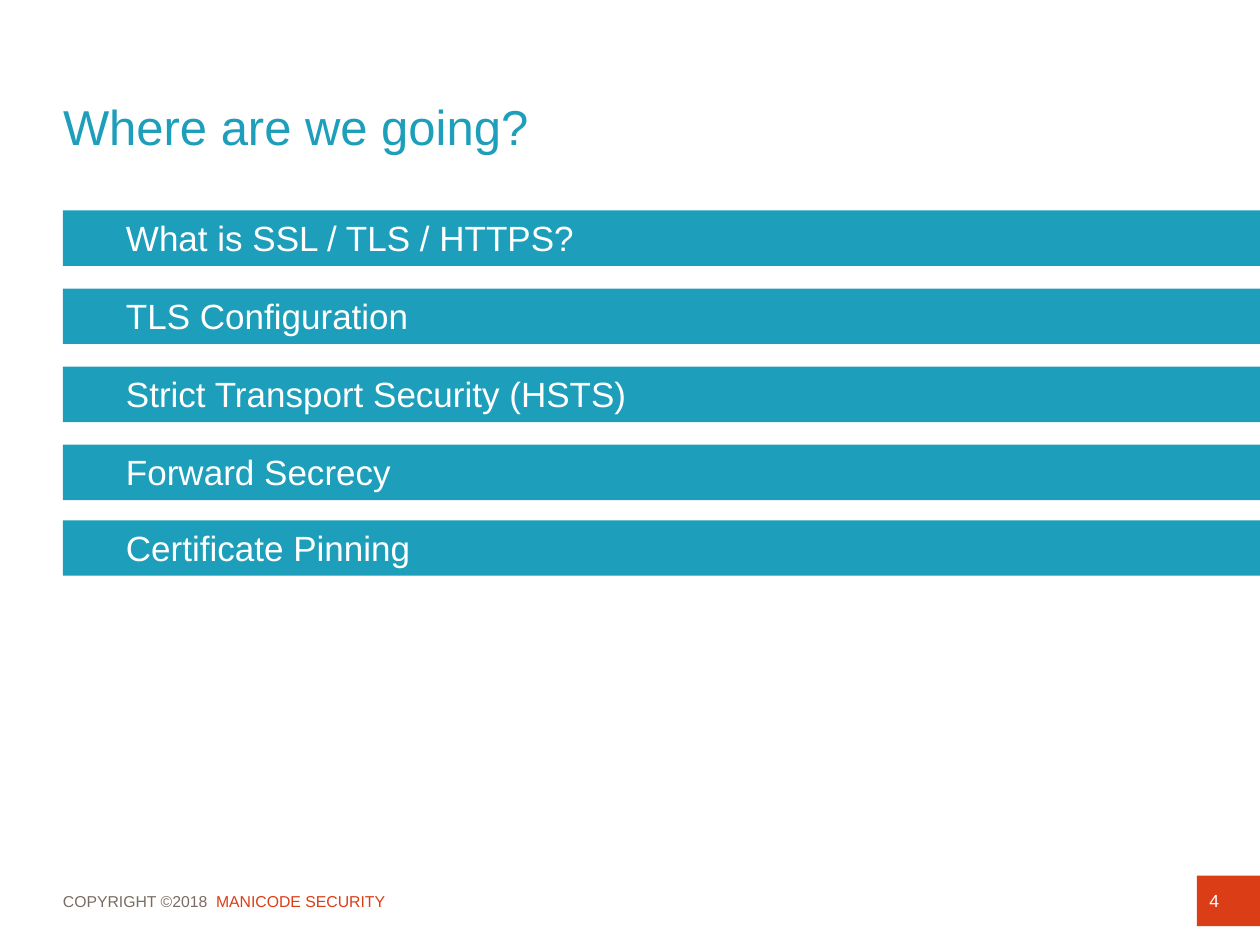
from typing import NamedTuple

from pptx import Presentation
from pptx.dml.color import RGBColor
from pptx.enum.shapes import MSO_SHAPE
from pptx.enum.text import MSO_ANCHOR, MSO_AUTO_SIZE, PP_ALIGN
from pptx.util import Emu, Pt

EMU_PER_PX = 9144  # 100 px to the inch
COLORS = {"teal": "1D9EBA", "red": "DB3D16", "taupe": "7A6C62", "white": "FFFFFF"}
FONT = "Arial"


class Box(NamedTuple):
    left: int
    top: int
    width: int
    height: int


class Topic(NamedTuple):
    label: str
    top: int


TOPICS = [
    Topic("What is SSL / TLS / HTTPS?", 167),
    Topic("TLS Configuration", 229),
    Topic("Strict Transport Security (HSTS)", 291),
    Topic("Forward Secrecy", 353),
    Topic("Certificate Pinning", 413),
]


def px(length: int) -> Emu:
    return Emu(length * EMU_PER_PX)


def rgb(color: str) -> RGBColor:
    return RGBColor.from_string(COLORS[color])


def write(frame, *runs: tuple[str, str], size: int, insets=(0, 0, 0, 0),
          anchor=MSO_ANCHOR.MIDDLE, space_after: int = 0) -> None:
    """Fill a text frame with one left-aligned paragraph of (text, color) runs."""
    frame.word_wrap = True
    frame.auto_size = MSO_AUTO_SIZE.NONE
    frame.vertical_anchor = anchor
    (frame.margin_left, frame.margin_top,
     frame.margin_right, frame.margin_bottom) = map(px, insets)
    paragraph = frame.paragraphs[0]
    paragraph.alignment = PP_ALIGN.LEFT
    paragraph.space_before = Pt(0)
    paragraph.space_after = Pt(space_after)
    for text, color in runs:
        run = paragraph.add_run()
        run.text = text
        run.font.name = FONT
        run.font.size = Pt(size)
        run.font.color.rgb = rgb(color)


def add_block(slide, box: Box, color: str):
    block = slide.shapes.add_shape(MSO_SHAPE.RECTANGLE, *map(px, box))
    block.shadow.inherit = False
    block.fill.solid()
    block.fill.fore_color.rgb = rgb(color)
    block.line.fill.background()
    return block


def add_topic_bar(slide, topic: Topic) -> None:
    bar = add_block(slide, Box(50, topic.top, 950, 44), "teal")
    write(bar.text_frame, (topic.label, "white"), size=20,
          insets=(50, 5, 10, 5), anchor=MSO_ANCHOR.TOP, space_after=3)
    bar.text_frame.auto_size = MSO_AUTO_SIZE.SHAPE_TO_FIT_TEXT


def main() -> None:
    deck = Presentation()
    deck.slide_width, deck.slide_height = px(1000), px(750)
    slide = deck.slides.add_slide(deck.slide_layouts[5])

    copyright_line = slide.shapes.add_textbox(*map(px, Box(50, 695, 900, 40)))
    write(copyright_line.text_frame, ("COPYRIGHT ©2018  ", "taupe"),
          ("MANICODE SECURITY", "red"), size=9)

    title = slide.shapes.title
    title.left, title.top, title.width, title.height = map(px, Box(50, 50, 900, 100))
    write(title.text_frame, ("Where are we going?", "teal"), size=28)

    page_number = add_block(slide, Box(950, 695, 50, 40), "red")
    write(page_number.text_frame, ("4", "white"), size=10, insets=(10, 5, 10, 5))

    for topic in TOPICS:
        add_topic_bar(slide, topic)

    deck.save("out.pptx")


if __name__ == "__main__":
    main()
